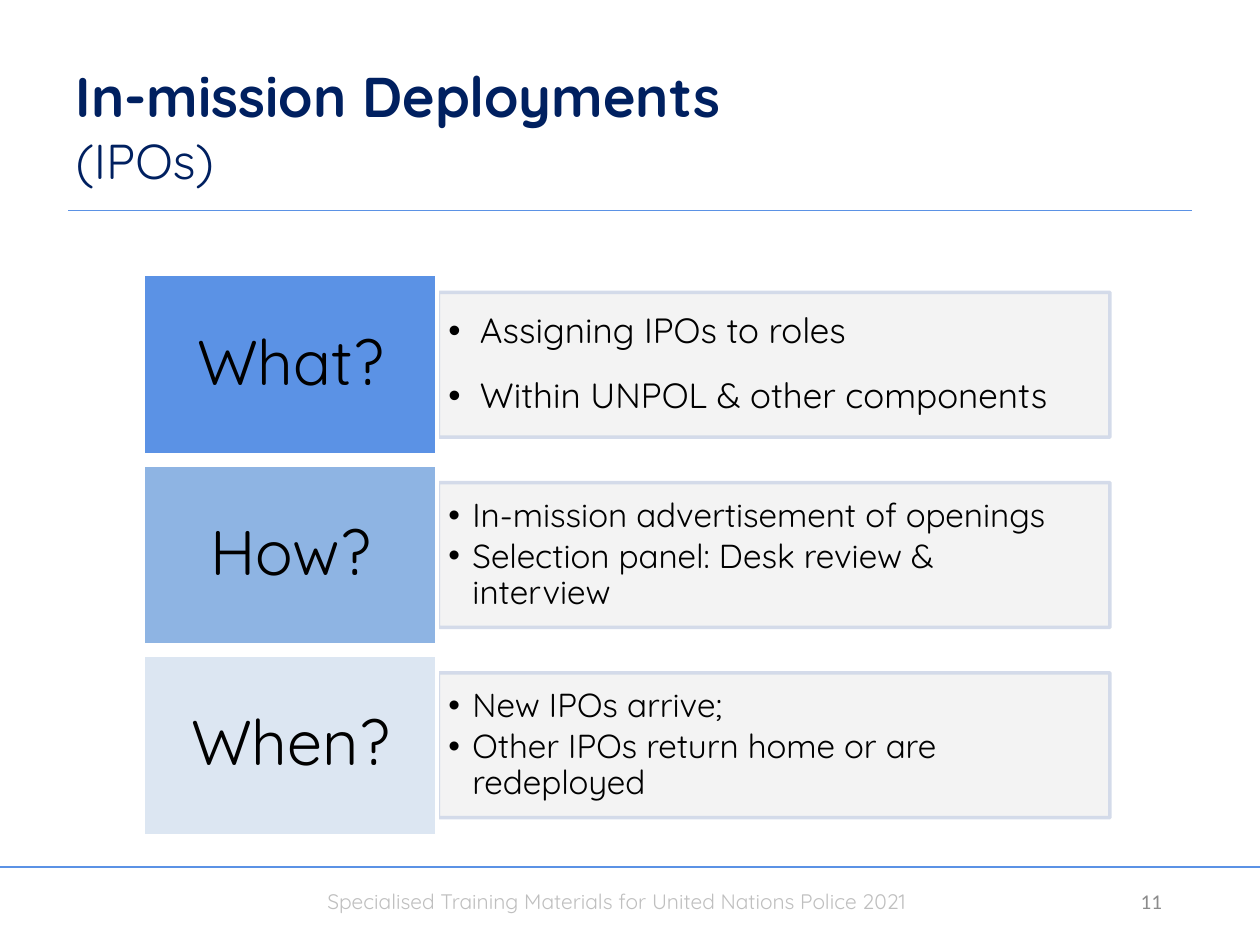
from lxml.etree import SubElement
from pptx import Presentation
from pptx.dml.color import RGBColor
from pptx.enum.shapes import MSO_CONNECTOR, MSO_SHAPE
from pptx.enum.text import MSO_ANCHOR, MSO_AUTO_SIZE, PP_ALIGN
from pptx.oxml.ns import qn
from pptx.util import Inches, Pt

COLORS = {
    "rule": "5B92E5", "title": "002060", "text": "000000", "panel": "F2F2F2",
    "panel_edge": "D0D8E8", "white": "FFFFFF", "footer": "BFBFBF", "number": "8C8C8C",
}
TITLE = [("In-mission Deployments ", 32, True), ("(IPOs)", 28, False)]
ROWS = [
    {"label": "What?", "fill": "5B92E5", "size": 20, "indent": 0.25, "after": 15.6,
     "points": ["Assigning IPOs to roles", "Within UNPOL & other components"]},
    {"label": "How?", "fill": "8EB4E3", "size": 19, "indent": 0.19, "after": 2.85,
     "points": ["In-mission advertisement of openings",
                "Selection panel: Desk review & \vinterview"]},
    {"label": "When?", "fill": "DCE6F2", "size": 19, "indent": 0.19, "after": 2.85,
     "points": ["New IPOs arrive;", "Other IPOs return home or are redeployed"]},
]
FOOTER = "Specialised Training Materials for United Nations Police 2021"
RULES = [(0, 10, 6.88), (0.54, 9.46, 1.67)]
ROW_TOP, ROW_PITCH = 2.18, 1.51
LABEL_LEFT, LABEL_WIDTH, LABEL_HEIGHT = 1.14, 2.33, 1.43
PANEL_LEFT, PANEL_WIDTH, PANEL_HEIGHT = 3.48, 5.33, 1.15


def rgb(value):
    return RGBColor.from_string(value)


def style(font, size, color, name="Quicksand", bold=False):
    font.size, font.name, font.bold = Pt(size), name, bold
    font.color.rgb = rgb(color)


def set_insets(frame, left, top, right, bottom):
    frame.margin_left, frame.margin_top = Inches(left), Inches(top)
    frame.margin_right, frame.margin_bottom = Inches(right), Inches(bottom)


def add_rule(page, left, right, top):
    rule = page.shapes.add_connector(
        MSO_CONNECTOR.STRAIGHT, Inches(left), Inches(top), Inches(right), Inches(top))
    rule.line.color.rgb = rgb(COLORS["rule"])
    rule.line.width = Pt(0.75)
    SubElement(rule._element.spPr, qn("a:effectLst"))


def add_text(page, text, place, color, name, align):
    box = page.shapes.add_textbox(*map(Inches, place))
    frame = box.text_frame
    frame.word_wrap = True
    frame.vertical_anchor = MSO_ANCHOR.MIDDLE
    para = frame.paragraphs[0]
    para.text, para.alignment = text, align
    style(para.runs[0].font, 12, color, name)


def add_block(page, kind, place, fill, edge):
    block = page.shapes.add_shape(kind, *map(Inches, place))
    block.shadow.inherit = False
    block.fill.solid()
    block.fill.fore_color.rgb = rgb(fill)
    block.line.color.rgb = rgb(edge)
    block.line.width = Pt(2)
    block.text_frame.word_wrap = True
    block.text_frame.vertical_anchor = MSO_ANCHOR.MIDDLE
    return block


def add_panel(page, row, top):
    place = (PANEL_LEFT, top, PANEL_WIDTH, PANEL_HEIGHT)
    panel = add_block(page, MSO_SHAPE.RECTANGLE, place, COLORS["panel"], COLORS["panel_edge"])
    for color in panel._element.spPr.iter(qn("a:srgbClr")):
        SubElement(color, qn("a:alpha"), val="90000")
    frame = panel.text_frame
    set_insets(frame, 0.08, 0.04, 0.13, 0.04)
    frame.text = "\n".join(row["points"])
    for para in frame.paragraphs:
        para.alignment = PP_ALIGN.LEFT
        para.line_spacing, para.space_after = 0.9, Pt(row["after"])
        props = para._p.get_or_add_pPr()
        props.set("marL", str(Inches(row["indent"])))
        props.set("indent", str(-Inches(row["indent"])))
        SubElement(props, qn("a:buFont"), typeface="Arial")
        SubElement(props, qn("a:buChar"), char="•")
        style(para.font, row["size"], COLORS["text"])
        for span in para.runs:
            style(span.font, row["size"], COLORS["text"])


def add_label(page, row, top):
    place = (LABEL_LEFT, top, LABEL_WIDTH, LABEL_HEIGHT)
    label = add_block(page, MSO_SHAPE.ROUNDED_RECTANGLE, place, row["fill"], COLORS["white"])
    label.adjustments[0] = 0
    set_insets(label.text_frame, 0.15, 0.07, 0.15, 0.07)
    para = label.text_frame.paragraphs[0]
    para.text, para.alignment, para.line_spacing = row["label"], PP_ALIGN.CENTER, 0.9
    style(para.runs[0].font, 36, COLORS["text"])


def set_title(title):
    title.left, title.top = Inches(0.5), Inches(0.5)
    title.width, title.height = Inches(7.83), Inches(1.05)
    frame = title.text_frame
    frame.auto_size = MSO_AUTO_SIZE.NONE
    frame.vertical_anchor = MSO_ANCHOR.BOTTOM
    para = frame.paragraphs[0]
    para.text = "\v".join(text for text, _, _ in TITLE)
    para.alignment, para.line_spacing = PP_ALIGN.LEFT, Pt(34.4)
    for span, (_, size, bold) in zip(para.runs, TITLE):
        style(span.font, size, COLORS["title"], bold=bold)


def main():
    """Build the in-mission deployments slide."""
    deck = Presentation()
    deck.slide_width, deck.slide_height = Inches(10), Inches(7.5)
    page = deck.slides.add_slide(deck.slide_layouts[5])
    set_title(page.shapes.title)
    for rule in RULES:
        add_rule(page, *rule)
    add_text(page, FOOTER, (2.5, 7, 5, 0.3), COLORS["footer"], "Quicksand", PP_ALIGN.LEFT)
    add_text(page, "11", (8.6, 6.95, 0.72, 0.4), COLORS["number"], "Calibri", PP_ALIGN.RIGHT)
    for index, row in enumerate(ROWS):
        top = ROW_TOP + index * ROW_PITCH
        add_panel(page, row, top + (LABEL_HEIGHT - PANEL_HEIGHT) / 2)
        add_label(page, row, top)
    deck.save("out.pptx")


if __name__ == "__main__":
    main()
